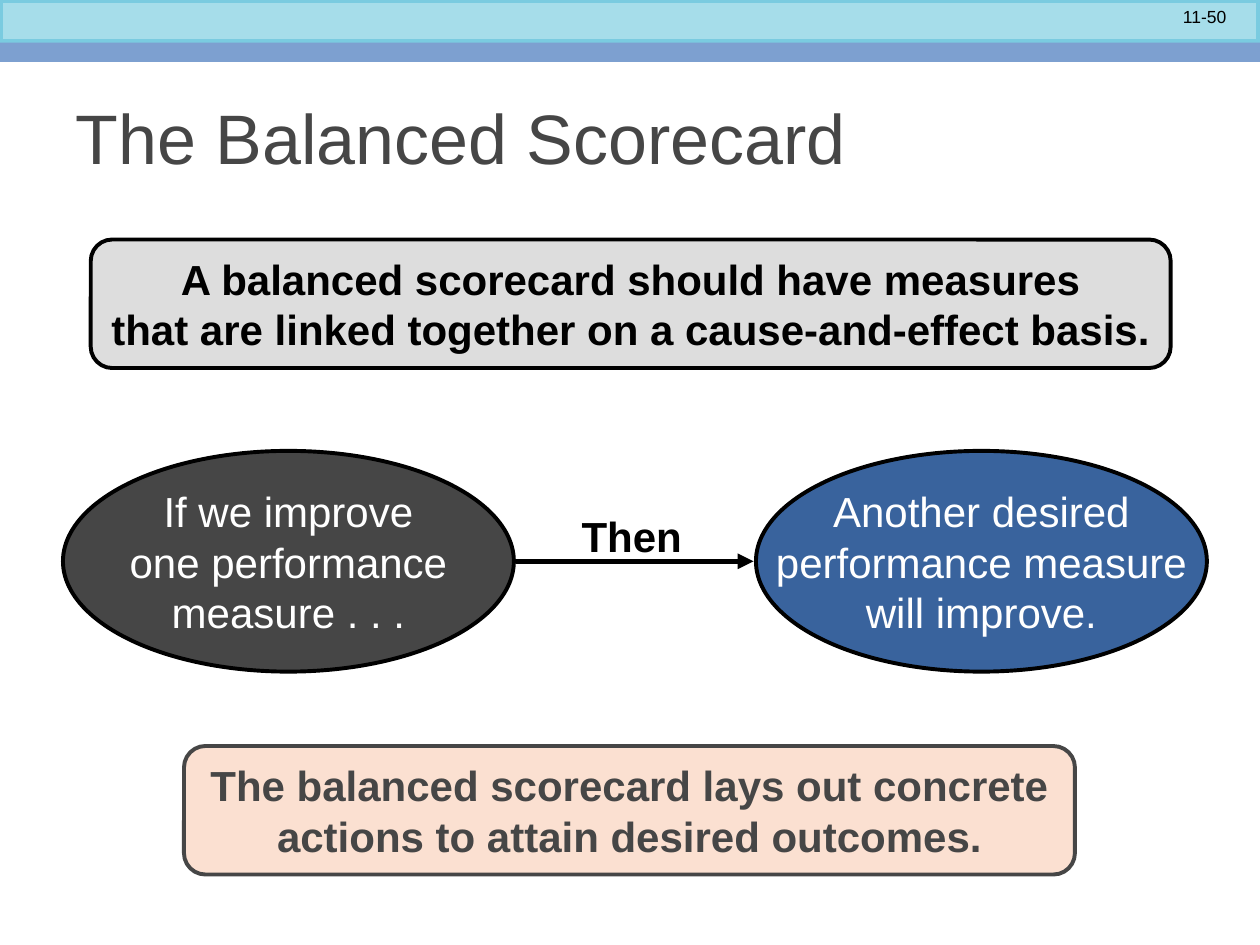
from dataclasses import dataclass
from typing import Optional

from lxml.etree import SubElement
from pptx import Presentation
from pptx.dml.color import RGBColor
from pptx.enum.shapes import MSO_CONNECTOR, MSO_SHAPE
from pptx.enum.text import MSO_ANCHOR, PP_ALIGN
from pptx.oxml.ns import qn
from pptx.util import Cm, Pt

COLORS = {
    "black": "000000",
    "white": "FFFFFF",
    "charcoal": "464646",
    "grey": "DDDDDD",
    "peach": "FBE0D1",
    "blue": "39639D",
    "aqua": "A6DDEA",
    "aqua edge": "7ACBE0",
    "periwinkle": "7DA0D0",
}
FONT = "Arial"


@dataclass
class Box:
    """A filled shape; lengths in centimetres, line width in points."""
    kind: MSO_SHAPE
    left: float
    top: float
    width: float
    height: float
    fill: str
    line: Optional[str] = None
    line_width: float = 2.25
    text: str = ""
    color: str = "black"
    bold: bool = False
    wrap: bool = False


ELLIPSE_TOP, ELLIPSE_WIDTH, ELLIPSE_HEIGHT = 9.09, 9.09, 4.45
CAUSE_LEFT, EFFECT_LEFT = 1.27, 15.24
ARROW_GAP = 0.05

BOXES = [
    Box(MSO_SHAPE.RECTANGLE, 0, 0, 25.4, 0.86, "aqua", "aqua edge", 4),
    Box(MSO_SHAPE.RECTANGLE, 0, 0.86, 25.4, 0.39, "periwinkle"),
    Box(MSO_SHAPE.ROUNDED_RECTANGLE, 3.71, 15.04, 17.96, 2.59, "peach", "charcoal",
        text="The balanced scorecard lays out concrete actions to attain desired outcomes.",
        color="charcoal", bold=True, wrap=True),
    Box(MSO_SHAPE.ROUNDED_RECTANGLE, 1.83, 4.83, 21.77, 2.59, "grey", "black",
        text="A balanced scorecard should have measures\v"
             "that are linked together on a cause-and-effect basis.",
        bold=True),
    Box(MSO_SHAPE.OVAL, CAUSE_LEFT, ELLIPSE_TOP, ELLIPSE_WIDTH, ELLIPSE_HEIGHT,
        "charcoal", "black",
        text="If we improve\vone performance\vmeasure . . .", color="white"),
    Box(MSO_SHAPE.OVAL, EFFECT_LEFT, ELLIPSE_TOP, ELLIPSE_WIDTH, ELLIPSE_HEIGHT,
        "blue", "black",
        text="Another desired\vperformance measure\vwill improve.", color="white"),
]


def rgb(name: str) -> RGBColor:
    return RGBColor.from_string(COLORS[name])


def write_text(shape, text: str, *, size: float = 24, color: str = "black",
               bold: bool = False, align=PP_ALIGN.CENTER,
               anchor=MSO_ANCHOR.MIDDLE, wrap: bool = True) -> None:
    frame = shape.text_frame
    frame.word_wrap = wrap
    frame.vertical_anchor = anchor
    paragraph = frame.paragraphs[0]
    paragraph.text = text
    paragraph.alignment = align
    for run in paragraph.runs:
        run.font.name = FONT
        run.font.size = Pt(size)
        run.font.bold = bold
        run.font.color.rgb = rgb(color)


def draw_box(slide, box: Box) -> None:
    shape = slide.shapes.add_shape(box.kind, Cm(box.left), Cm(box.top),
                                   Cm(box.width), Cm(box.height))
    shape.shadow.inherit = False
    shape.fill.solid()
    shape.fill.fore_color.rgb = rgb(box.fill)
    if box.line:
        shape.line.color.rgb = rgb(box.line)
        shape.line.width = Pt(box.line_width)
    else:
        shape.line.fill.background()
    if box.text:
        write_text(shape, box.text, color=box.color, bold=box.bold, wrap=box.wrap)


def draw_arrow(slide, start: float, end: float, y: float) -> None:
    arrow = slide.shapes.add_connector(MSO_CONNECTOR.STRAIGHT,
                                       Cm(start), Cm(y), Cm(end), Cm(y))
    arrow.line.color.rgb = rgb("black")
    arrow.line.width = Pt(3)
    properties = arrow.element.spPr
    SubElement(properties.find(qn("a:ln")), qn("a:tailEnd"), type="triangle")
    SubElement(properties, qn("a:effectLst"))


def draw_label(slide, text: str, left: float, top: float, width: float,
               height: float, **text_format) -> None:
    label = slide.shapes.add_textbox(Cm(left), Cm(top), Cm(width), Cm(height))
    write_text(label, text, **text_format)


def main() -> None:
    presentation = Presentation()
    presentation.slide_width, presentation.slide_height = Cm(25.4), Cm(19.05)
    slide = presentation.slides.add_slide(presentation.slide_layouts[5])

    title = slide.shapes.title
    title.left, title.top = Cm(1.27), Cm(1.27)
    title.width, title.height = Cm(22.86), Cm(2.97)
    write_text(title, "The Balanced Scorecard", size=40, color="charcoal",
               align=PP_ALIGN.LEFT)

    for box in BOXES:
        draw_box(slide, box)
    draw_label(slide, "11-50", 21.59, 0, 3.38, 0.69, size=10,
               align=PP_ALIGN.RIGHT, anchor=MSO_ANCHOR.TOP)
    draw_arrow(slide, CAUSE_LEFT + ELLIPSE_WIDTH + ARROW_GAP,
               EFFECT_LEFT - ARROW_GAP, ELLIPSE_TOP + ELLIPSE_HEIGHT / 2)
    draw_label(slide, "Then", 11.25, 10.16, 2.97, 1.27, bold=True,
               anchor=MSO_ANCHOR.TOP)

    presentation.save("out.pptx")


if __name__ == "__main__":
    main()
